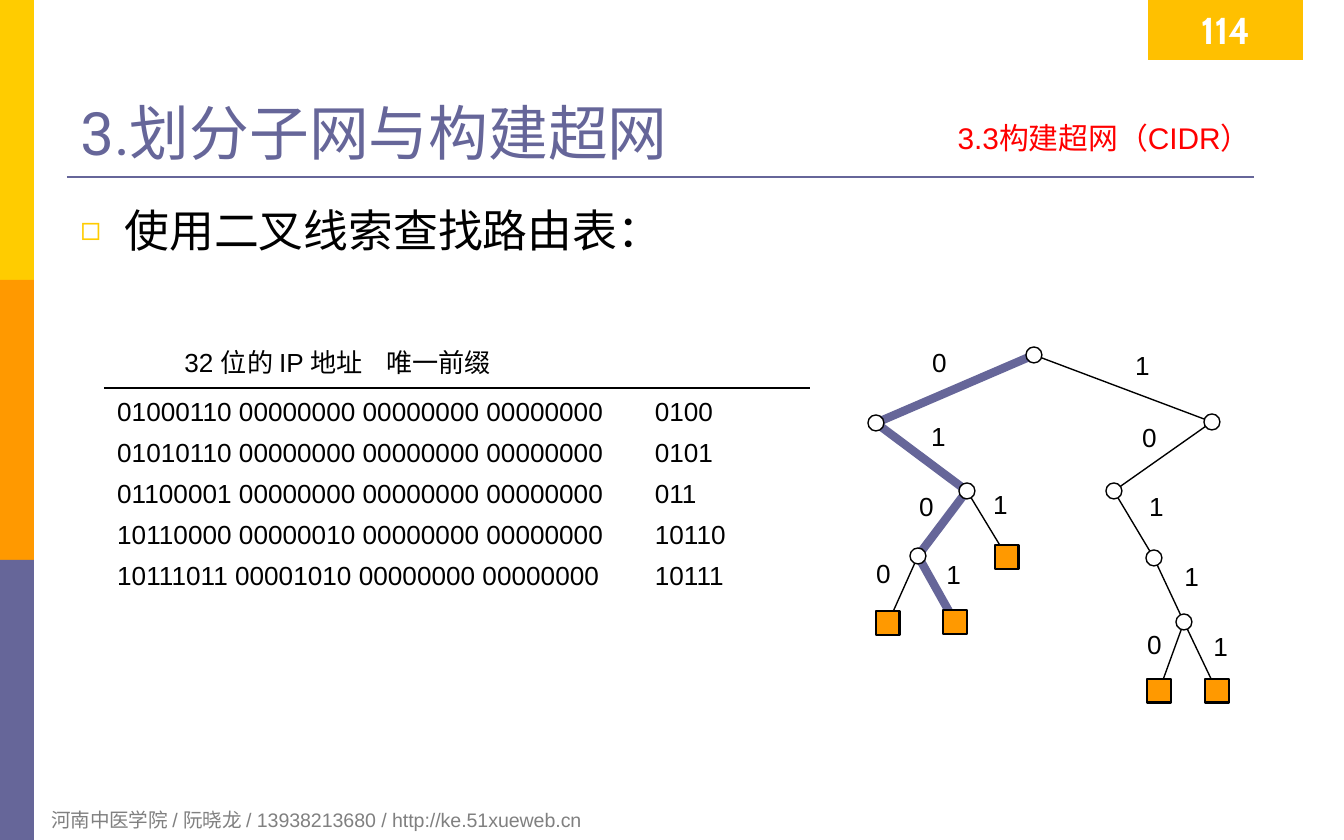
from lxml.etree import SubElement
from pptx import Presentation
from pptx.dml.color import RGBColor
from pptx.enum.shapes import MSO_CONNECTOR, MSO_SHAPE
from pptx.enum.text import MSO_ANCHOR, MSO_AUTO_SIZE, PP_ALIGN
from pptx.oxml.ns import qn
from pptx.util import Pt

PX = 914400 / 134.4
WIDTH, HEIGHT = 1344, 840

YELLOW = RGBColor(0xFF, 0xCC, 0x00)
AMBER = RGBColor(0xFF, 0xC0, 0x00)
ORANGE = RGBColor(0xFF, 0x99, 0x00)
SLATE = RGBColor(0x66, 0x66, 0x99)
GRAY = RGBColor(0x80, 0x80, 0x80)
RED = RGBColor(0xFF, 0x00, 0x00)
BLACK = RGBColor(0x00, 0x00, 0x00)
WHITE = RGBColor(0xFF, 0xFF, 0xFF)

TITLE = "3.划分子网与构建超网"
SECTION = "3.3构建超网（CIDR）"
TOPIC = "使用二叉线索查找路由表："
FOOTER = "河南中医学院 / 阮晓龙 / 13938213680 / http://ke.51xueweb.cn"
PAGE = "114"

HEADER = ("32 位的 IP 地址", "唯一前缀")
ROUTES = [
    ("01000110 00000000 00000000 00000000", "0100"),
    ("01010110 00000000 00000000 00000000", "0101"),
    ("01100001 00000000 00000000 00000000", "011"),
    ("10110000 00000010 00000000 00000000", "10110"),
    ("10111011 00001010 00000000 00000000", "10111"),
]
HEADER_TABS = (116, 513)
ROUTE_TABS = (551,)

# Trie nodes: bit prefix -> centre; a prefix listed in ROUTES is a leaf
NODES = {
    "": (1034, 355),
    "0": (876, 423), "1": (1212, 422),
    "01": (967, 491), "10": (1114, 491),
    "010": (918, 556), "011": (1007, 557), "101": (1154, 558),
    "0100": (888, 623), "0101": (955, 622), "1011": (1184, 622),
    "10110": (1159, 691), "10111": (1217, 691),
}
# Label of the edge that leads to each node: left, top
EDGE_LABELS = {
    "0": (919, 340), "1": (1122, 343),
    "01": (918, 414), "10": (1129, 415),
    "010": (906, 484), "011": (980, 482), "101": (1136, 484),
    "0100": (863, 551), "0101": (933, 552), "1011": (1171, 554),
    "10110": (1134, 622), "10111": (1200, 624),
}
LONG_PATHS = [("10111", BLACK, 0.75), ("0101", SLATE, 4.5)]
SINGLE_EDGES = ["0100", "011", "10110"]


def px(*lengths):
    return [round(length * PX) for length in lengths]


def write(frame, text, *, size, color=BLACK, font="Arial", bold=False, align=PP_ALIGN.LEFT,
          anchor=MSO_ANCHOR.TOP, tabs=(), bullet=None, line_spacing=None, after=0, add=False):
    frame.word_wrap = True
    frame.auto_size = MSO_AUTO_SIZE.NONE
    frame.vertical_anchor = anchor
    paragraph = frame.add_paragraph() if add else frame.paragraphs[0]
    paragraph.alignment = align
    paragraph.space_before = Pt(0)
    paragraph.space_after = Pt(after)
    if line_spacing:
        paragraph.line_spacing = line_spacing
    properties = paragraph._p.get_or_add_pPr()
    indent = px(44)[0] if bullet else 0
    properties.set("marL", str(indent))
    properties.set("indent", str(-indent))
    if bullet:
        bullet_color = SubElement(properties, qn("a:buClr"))
        SubElement(bullet_color, qn("a:srgbClr"), val=str(YELLOW))
        SubElement(properties, qn("a:buSzPct"), val="75000")
        SubElement(properties, qn("a:buChar"), char=bullet)
    else:
        SubElement(properties, qn("a:buNone"))
    if tabs:
        tab_list = SubElement(properties, qn("a:tabLst"))
        for stop in px(*tabs):
            SubElement(tab_list, qn("a:tab"), pos=str(stop), algn="l")
    run = paragraph.add_run()
    run.text = text
    run.font.size = Pt(size)
    run.font.name = font
    run.font.bold = bold
    run.font.color.rgb = color


def add_box(slide, preset, place, fill, line_width=0):
    box = slide.shapes.add_shape(preset, *px(*place))
    box.shadow.inherit = False
    box.fill.solid()
    box.fill.fore_color.rgb = fill
    if line_width:
        box.line.color.rgb = BLACK
        box.line.width = Pt(line_width)
    else:
        box.line.fill.background()
    return box


def add_line(slide, start, end, color=BLACK, width=0.75):
    line = slide.shapes.add_connector(MSO_CONNECTOR.STRAIGHT, *px(*start, *end))
    line.line.color.rgb = color
    line.line.width = Pt(width)
    SubElement(line._element.spPr, qn("a:effectLst"))


def add_polyline(slide, points, color, width):
    start, *rest = [px(*point) for point in points]
    builder = slide.shapes.build_freeform(*start, scale=1.0)
    builder.add_line_segments(rest, close=False)
    polyline = builder.convert_to_shape()
    polyline.shadow.inherit = False
    polyline.fill.background()
    polyline.line.color.rgb = color
    polyline.line.width = Pt(width)


def add_text(slide, place, text, **style):
    frame = slide.shapes.add_textbox(*px(*place)).text_frame
    write(frame, text, **style)
    return frame


def fill_placeholder(placeholder, place, text, **style):
    placeholder.left, placeholder.top, placeholder.width, placeholder.height = px(*place)
    write(placeholder.text_frame, text, **style)


def add_frame(slide):
    band_height = HEIGHT / 3
    for index, color in enumerate((YELLOW, ORANGE, SLATE)):
        add_box(slide, MSO_SHAPE.RECTANGLE, (0, index * band_height, 34, band_height), color)
    add_line(slide, (67, 177), (1254, 177), SLATE, 1.5)
    add_text(slide, (38, 801, 910, 38), FOOTER, size=10.5, color=GRAY)
    page = add_box(slide, MSO_SHAPE.RECTANGLE, (1148, 0, 155, 60), AMBER)
    write(page.text_frame, PAGE, size=20, color=WHITE, font="Cabin", bold=True,
          align=PP_ALIGN.CENTER, anchor=MSO_ANCHOR.MIDDLE)

    title, topic, section = slide.placeholders
    fill_placeholder(title, (67, 34, 1210, 140), TITLE, size=32, color=SLATE,
                     font="Roboto", anchor=MSO_ANCHOR.BOTTOM)
    fill_placeholder(topic, (67, 196, 1210, 555), TOPIC, size=24, bullet="◻")
    fill_placeholder(section, (841, 113, 423, 52), SECTION, size=16, color=RED,
                     align=PP_ALIGN.RIGHT)


def add_routes(slide):
    frame = add_text(slide, (104, 340, 706, 292), "\t" + "\t".join(HEADER), size=14,
                     tabs=HEADER_TABS, after=4.2)
    for route in ROUTES:
        write(frame, "\t".join(route), size=14, tabs=ROUTE_TABS,
              line_spacing=Pt(21.9), add=True)
    add_line(slide, (104, 388), (810, 388))


def add_trie(slide):
    for leaf, color, width in LONG_PATHS:
        points = [NODES[leaf[:depth]] for depth in range(len(leaf) + 1)]
        add_polyline(slide, points, color, width)
    for prefix in SINGLE_EDGES:
        add_line(slide, NODES[prefix[:-1]], NODES[prefix])
    for prefix, corner in EDGE_LABELS.items():
        add_text(slide, (*corner, 43, 46), prefix[-1], size=14)
    leaves = {prefix for _, prefix in ROUTES}
    for prefix, (x, y) in NODES.items():
        if prefix in leaves:
            add_box(slide, MSO_SHAPE.RECTANGLE, (x - 12, y - 12, 24, 24), ORANGE, 1.5)
        else:
            add_box(slide, MSO_SHAPE.OVAL, (x - 8, y - 8, 16, 16), WHITE, 0.75)


def main():
    deck = Presentation()
    deck.slide_width, deck.slide_height = px(WIDTH, HEIGHT)
    slide = deck.slides.add_slide(deck.slide_layouts[3])
    add_frame(slide)
    add_routes(slide)
    add_trie(slide)
    deck.save("out.pptx")


if __name__ == "__main__":
    main()
